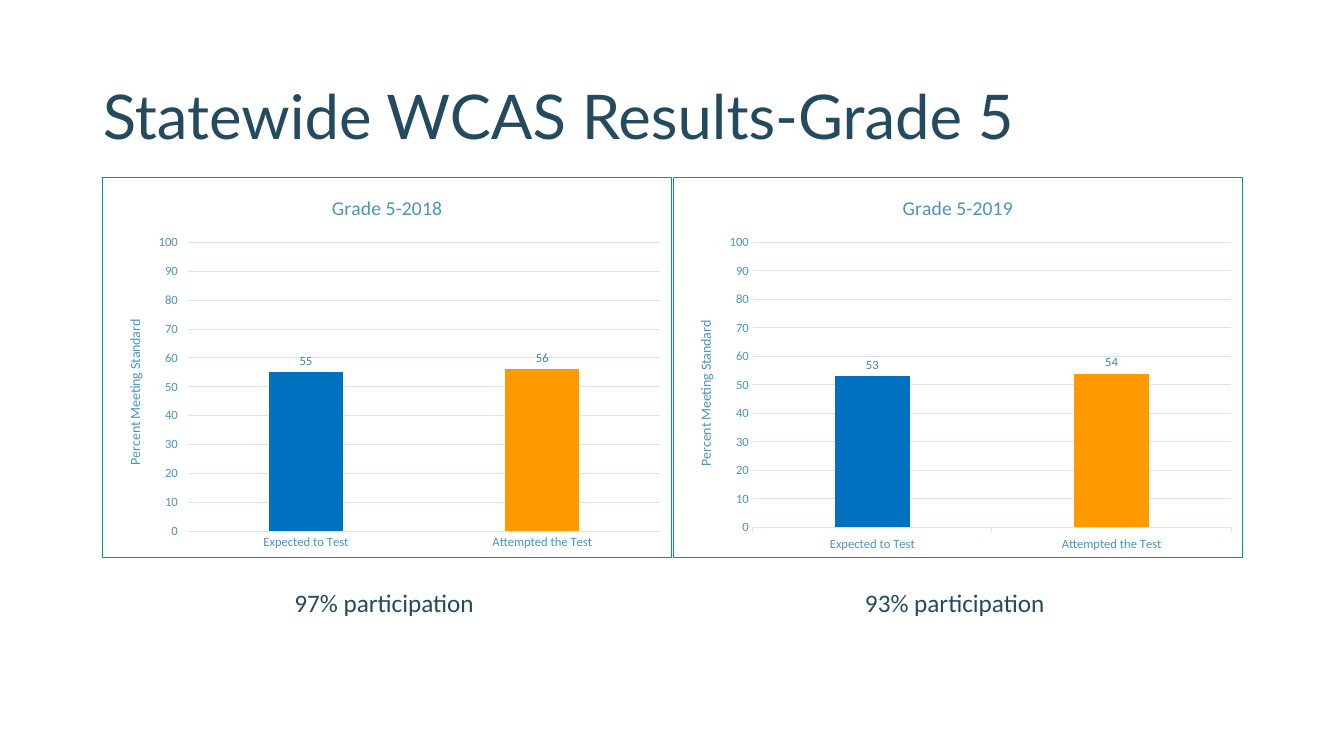
from pptx import Presentation
from pptx.chart.data import CategoryChartData
from pptx.dml.color import RGBColor
from pptx.enum.chart import XL_CHART_TYPE, XL_LABEL_POSITION, XL_TICK_LABEL_POSITION, XL_TICK_MARK
from pptx.enum.text import MSO_ANCHOR, MSO_AUTO_SIZE, PP_ALIGN
from pptx.oxml import parse_xml
from pptx.oxml.ns import nsdecls, qn
from pptx.util import Inches, Pt

HUE = {"ink": "244A5F", "soft": "4C94BB", "label": "3E80A4", "grid": "D6E6EF",
       "edge": "009999", "base": "848382", "blue": "0070C0", "gold": "FF9900"}
LEFT, TOP, WIDE, HIGH = 1.01, 1.76, 5.66, 3.78
CATS = ["Expected to Test", "Attempted the Test"]
# Year, values, participation, plot area as shares of the chart, tick style
YEARS = [
    ("2018", (55, 56), "97%", (0.15, 0.17, 0.83, 0.76),
     XL_TICK_MARK.NONE, XL_TICK_LABEL_POSITION.LOW),
    ("2019", (53, 54), "93%", (0.14, 0.17, 0.84, 0.75),
     XL_TICK_MARK.OUTSIDE, XL_TICK_LABEL_POSITION.NEXT_TO_AXIS),
]


def tint(name):
    return RGBColor.from_string(HUE[name])


def style(font, size, hue, face="Calibri"):
    font.size, font.name, font.bold = Pt(size), face, False
    font.color.rgb = tint(hue)


def rule(line, hue):
    line.color.rgb = tint(hue)
    line.width = Pt(0.75)


def head(frame, text, size):
    frame.text = text
    style(frame.paragraphs[0].runs[0].font, size, "soft")


def frame_chart(chart, shares):
    """Fix the plot area and draw the border around the chart."""
    root = chart.element
    area = root.find(".//" + qn("c:plotArea"))
    old = area.find(qn("c:layout"))
    if old is not None:
        area.remove(old)
    sizes = "".join(f'<c:{key} val="{val}"/>' for key, val in zip("xywh", shares))
    area.insert(0, parse_xml(
        f'<c:layout {nsdecls("c")}><c:manualLayout><c:layoutTarget val="inner"/>'
        f'<c:xMode val="edge"/><c:yMode val="edge"/>{sizes}</c:manualLayout></c:layout>'))
    root.find(qn("c:txPr")).addprevious(parse_xml(
        f'<c:spPr {nsdecls("c", "a")}><a:noFill/><a:ln w="9525"><a:solidFill>'
        f'<a:srgbClr val="{HUE["edge"]}"/></a:solidFill></a:ln></c:spPr>'))


def add_title(slide, x, y, w, h):
    title = slide.shapes.title
    title.left, title.top, title.width, title.height = map(Inches, (x, y, w, h))
    frame = title.text_frame
    frame.text = "Statewide WCAS Results-Grade 5"
    frame.vertical_anchor = MSO_ANCHOR.MIDDLE
    frame.auto_size = MSO_AUTO_SIZE.NONE
    para = frame.paragraphs[0]
    para.alignment, para.line_spacing = PP_ALIGN.LEFT, 0.9
    style(para.runs[0].font, 44, "ink", "Lato")


def add_bars(slide, x, y, w, h, year, vals, shares, tick, place):
    data = CategoryChartData()
    data.categories = CATS
    data.add_series("Series 1", vals)
    chart = slide.shapes.add_chart(XL_CHART_TYPE.COLUMN_CLUSTERED,
                                   *map(Inches, (x, y, w, h)), data).chart
    style(chart.font, 10, "ink")
    chart.has_legend = False
    chart.has_title = True
    head(chart.chart_title.text_frame, f"Grade 5-{year}", 14)

    # Axes
    cat, val = chart.category_axis, chart.value_axis
    for axis in (cat, val):
        style(axis.tick_labels.font, 9, "soft")
        axis.minor_tick_mark = XL_TICK_MARK.NONE
    cat.major_tick_mark, val.major_tick_mark = tick, XL_TICK_MARK.NONE
    rule(cat.format.line, "grid")
    val.format.line.fill.background()
    val.minimum_scale, val.maximum_scale, val.major_unit = 0, 100, 10
    val.tick_label_position = place
    rule(val.major_gridlines.format.line, "grid")
    head(val.axis_title.text_frame, "Percent Meeting Standard", 10)

    # Columns and their labels
    plot = chart.plots[0]
    plot.gap_width, plot.overlap, plot.vary_by_categories = 219, -27, False
    bars = plot.series[0]
    bars.format.fill.solid()
    bars.format.fill.fore_color.rgb = tint("base")
    for spot, hue in enumerate(("blue", "gold")):
        fill = bars.points[spot].format.fill
        fill.solid()
        fill.fore_color.rgb = tint(hue)
    labels = bars.data_labels
    labels.show_value = True
    labels.position = XL_LABEL_POSITION.OUTSIDE_END
    style(labels.font, 9, "label")
    frame_chart(chart, shares)


def add_note(slide, x, y, w, h, text):
    frame = slide.shapes.add_textbox(*map(Inches, (x, y, w, h))).text_frame
    frame.word_wrap = True
    frame.text = text
    style(frame.paragraphs[0].runs[0].font, 18, "ink")


def main():
    deck = Presentation()
    deck.slide_width, deck.slide_height = Inches(13.33), Inches(7.5)
    slide = deck.slides.add_slide(deck.slide_layouts[5])
    add_title(slide, 0.92, 0.46, 11.5, 1.45)
    for col, (year, vals, share, shares, tick, place) in enumerate(YEARS):
        x = LEFT + col * WIDE
        add_bars(slide, x, TOP, WIDE, HIGH, year, vals, shares, tick, place)
        add_note(slide, x + WIDE * 0.32, TOP + HIGH + 0.24, 2.03, 0.4,
                 f"{share} participation")
    deck.save("out.pptx")


if __name__ == "__main__":
    main()
